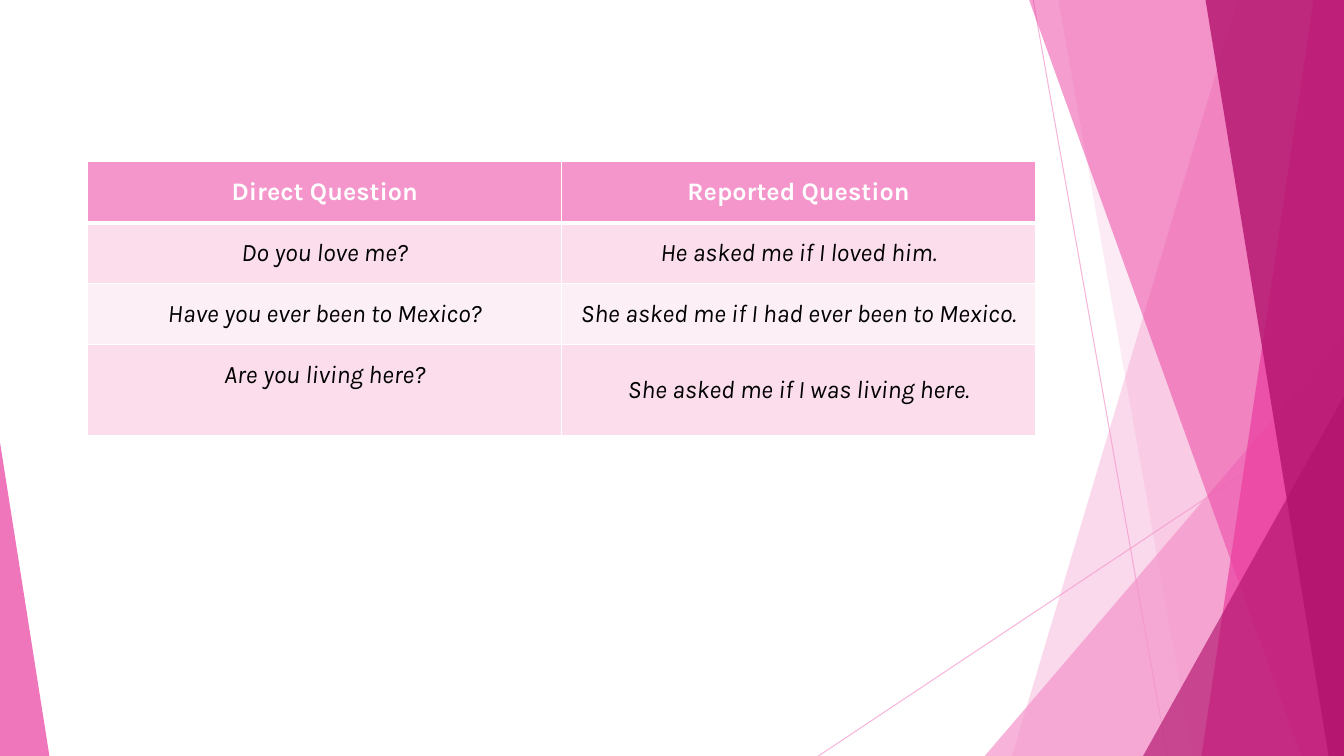
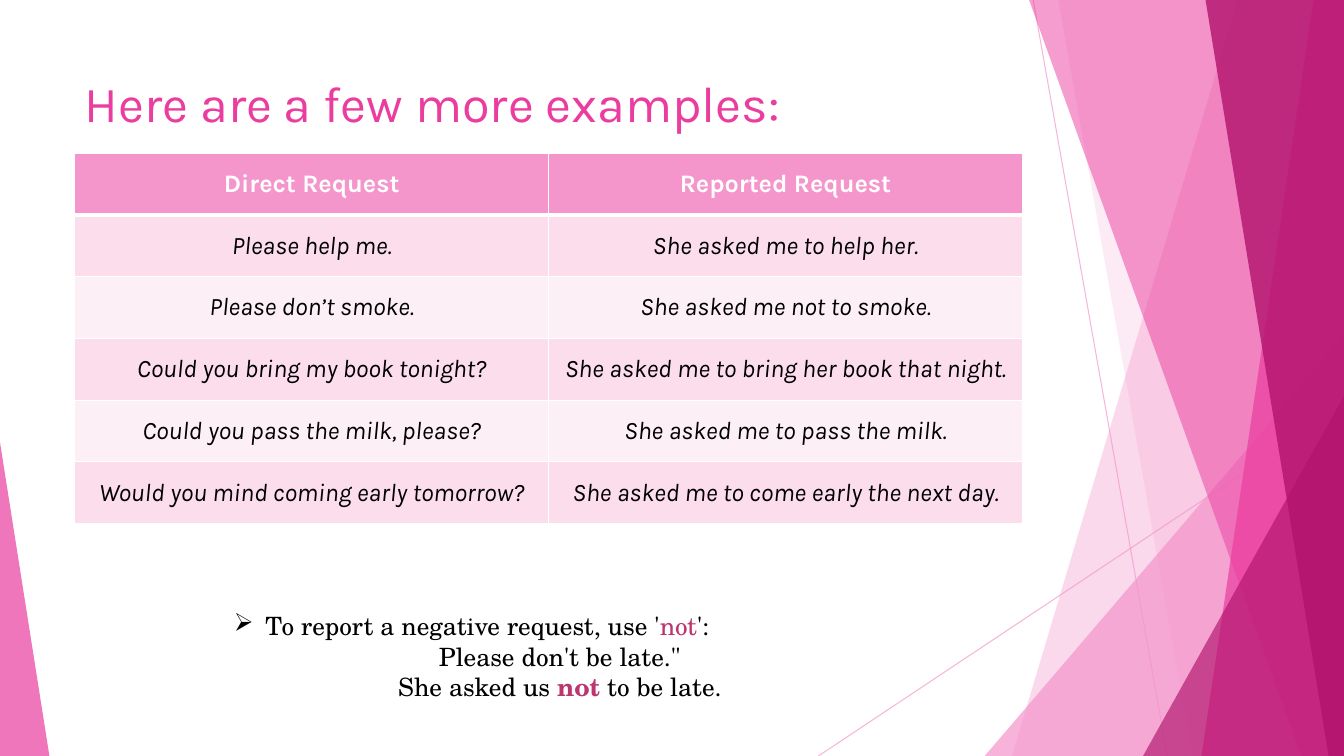
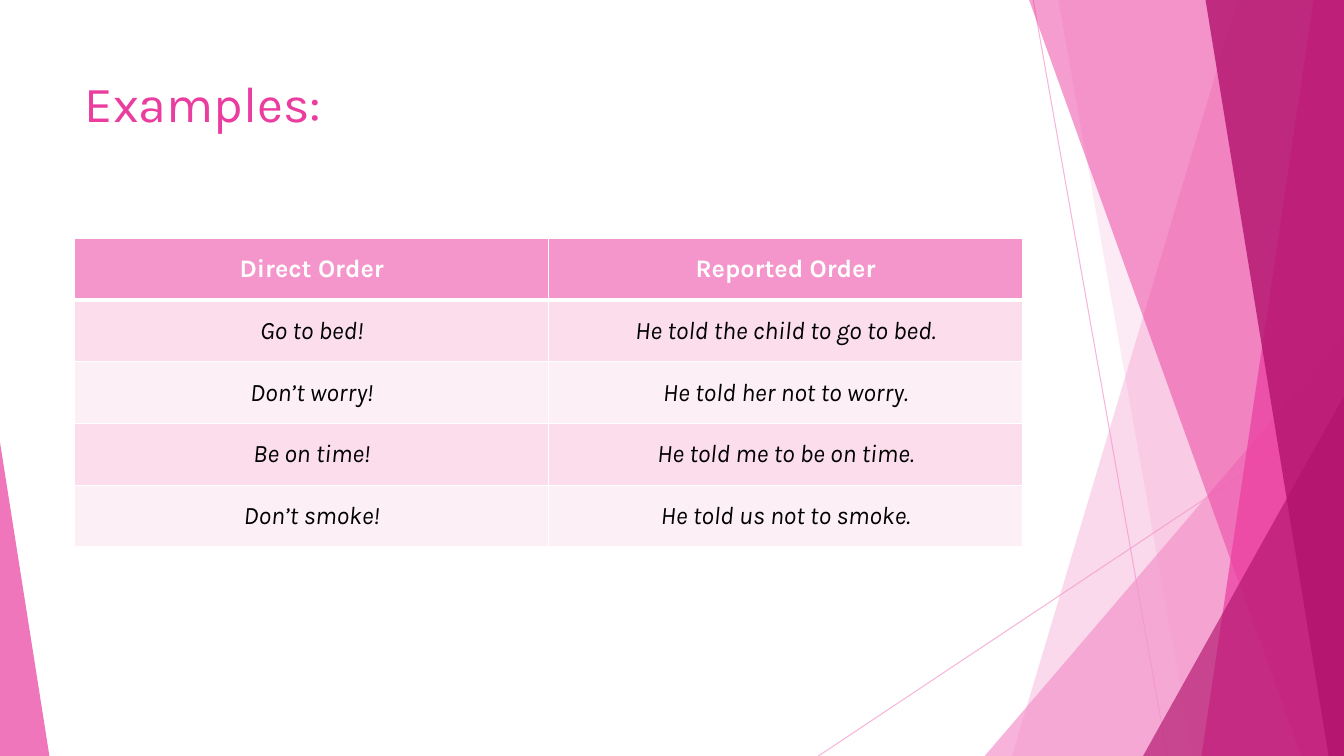
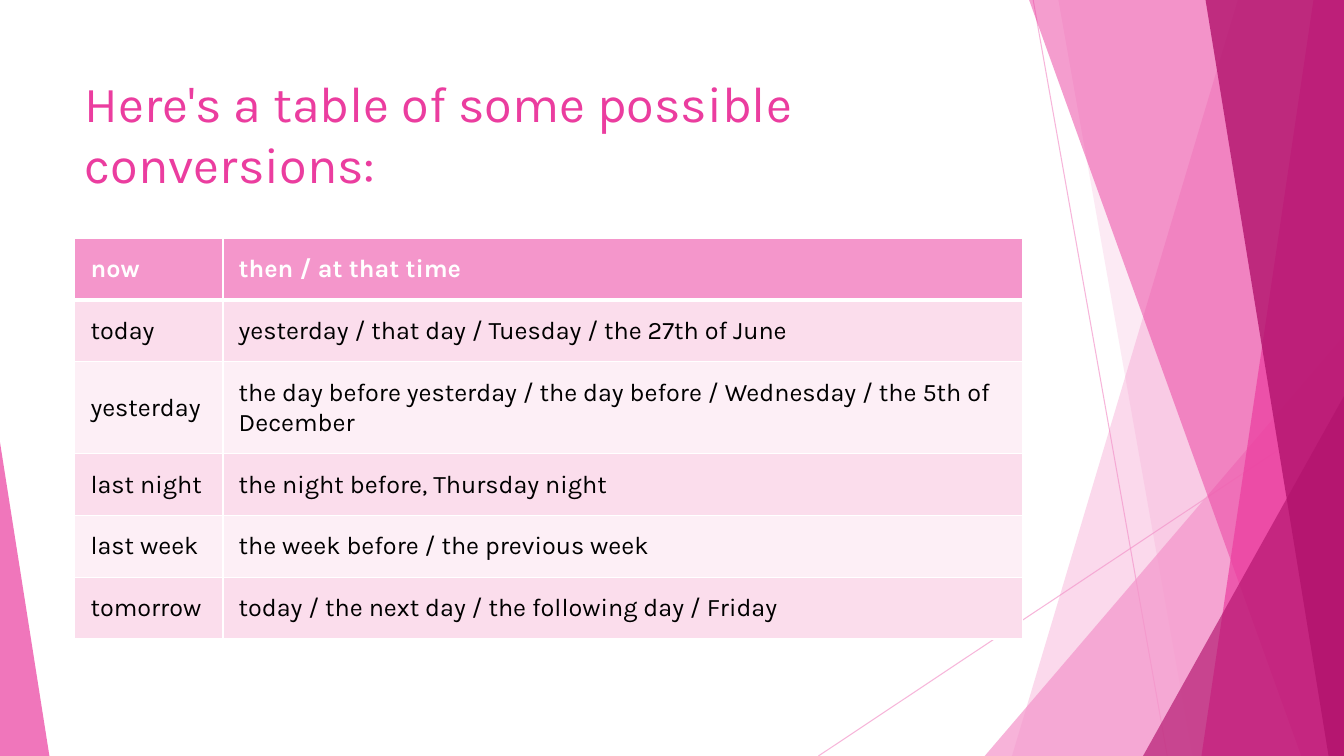
from lxml.etree import SubElement
from pptx import Presentation
from pptx.dml.color import RGBColor
from pptx.enum.shapes import MSO_CONNECTOR, MSO_SHAPE
from pptx.enum.text import MSO_ANCHOR, PP_ALIGN
from pptx.oxml import parse_xml
from pptx.oxml.ns import nsdecls, qn
from pptx.util import Pt

COLORS = {
    "pale": "F496CB", "pink": "EB3D9F", "deep": "B2136D",
    "band_dark": "FBDDEC", "band_light": "FDEFF6",
    "accent": "BC356F", "black": "000000", "white": "FFFFFF",
}
WIDTH, HEIGHT = 960, 540
ROW_HEIGHT, TALL_ROW_HEIGHT, CELL_MARGIN = 43.6, 64.6, 11.25

# Facets from back to front: a slab runs from its left edge to the slide's right
# side (top x, bottom x); a wedge is a triangle (left, top, width, apex position).
FACETS = [
    ("slab", (884.2, 722.9), "pale", 36),
    ("slab", (756, 851.8), "pale", 20),
    ("wedge", (703.4, 240, 256.6, 1), "pale", 72),
    ("slab", (735.1, 929.5), "pink", 50),
    ("slab", (938.2, 858.2), "pink", 70),
    ("slab", (861.1, 949), "deep", 80),
    ("wedge", (816.5, 283, 143.5, 1), "deep", 66),
    ("wedge", (0, 316, 35.3, 0), "pink", 70),
]
RAYS = [(738, 0, 833.8, HEIGHT), (WIDTH, 290.2, 584.6, HEIGHT)]

HALVES = (338.4, 338.4)
LESSONS = [
    {"title": None, "left": 62.8, "top": 115.5, "columns": HALVES, "centred": True,
     "rows": [
         ("Direct Question", "Reported Question"),
         ("Do you love me?", "He asked me if I loved him."),
         ("Have you ever been to Mexico?", "She asked me if I had ever been to Mexico."),
         ("Are you living here?", "She asked me if I was living here."),
     ]},
    {"title": "Here are a few more examples:", "left": 53.5, "top": 109.5,
     "columns": HALVES, "centred": True,
     "rows": [
         ("Direct Request", "Reported Request"),
         ("Please help me.", "She asked me to help her."),
         ("Please don’t smoke.", "She asked me not to smoke."),
         ("Could you bring my book tonight?", "She asked me to bring her book that night."),
         ("Could you pass the milk, please?", "She asked me to pass the milk."),
         ("Would you mind coming early tomorrow?", "She asked me to come early the next day."),
     ]},
    {"title": "Examples:", "left": 53.5, "top": 170.3, "columns": HALVES, "centred": True,
     "rows": [
         ("Direct Order", "Reported Order"),
         ("Go to bed!", "He told the child to go to bed."),
         ("Don’t worry!", "He told her not to worry."),
         ("Be on time!", "He told me to be on time."),
         ("Don’t smoke!", "He told us not to smoke."),
     ]},
    {"title": "Here's a table of some possible conversions:", "left": 53.5, "top": 170.3,
     "columns": (105.8, 571), "centred": False,
     "rows": [
         ("now", "then / at that time"),
         ("today", "yesterday / that day / Tuesday / the 27th of June"),
         ("yesterday", "the day before yesterday / the day before / Wednesday / the 5th of December"),
         ("last night", "the night before, Thursday night"),
         ("last week", "the week before / the previous week"),
         ("tomorrow", "today / the next day / the following day / Friday"),
     ]},
]
NOTE = [
    [("To report a negative request, use '", "black", False), ("not", "accent", False),
     ("':", "black", False)],
    [("Please don't be late.\"", "black", False)],
    [("She asked us ", "black", False), ("not", "accent", True),
     (" to be late.", "black", False)],
]


def set_opacity(shape, percent):
    for color in shape.element.iter(qn("a:srgbClr")):
        SubElement(color, qn("a:alpha"), val=str(percent * 1000))


def style_span(span, size, color, name="Karla", bold=False, italic=False):
    font = span.font
    font.size, font.name, font.bold, font.italic = Pt(size), name, bold, italic
    font.color.rgb = RGBColor.from_string(COLORS[color])


deck = Presentation()
deck.slide_width, deck.slide_height = Pt(WIDTH), Pt(HEIGHT)
layout = deck.slide_layouts[6]
for placeholder in list(layout.placeholders):
    layout.shapes.element.remove(placeholder.element)
pages = [deck.slides.add_slide(layout) for lesson in LESSONS]

# Shared backdrop: drawn on the first page, then moved into the layout
canvas = pages[0].shapes
for ray in RAYS:
    line = canvas.add_connector(MSO_CONNECTOR.STRAIGHT, *[Pt(value) for value in ray])
    line.line.width = Pt(0.75)
    line.line.color.rgb = RGBColor.from_string(COLORS["pale"])
    SubElement(line.element.spPr, qn("a:effectLst"))
    set_opacity(line, 70)

for kind, measures, color, opacity in FACETS:
    if kind == "slab":
        top_x, bottom_x = measures
        builder = canvas.build_freeform(Pt(top_x), 0)
        corners = [(WIDTH, 0), (WIDTH, HEIGHT), (bottom_x, HEIGHT)]
        builder.add_line_segments([(Pt(x), Pt(y)) for x, y in corners])
        facet = builder.convert_to_shape()
    else:
        left, top, width, apex = measures
        facet = canvas.add_shape(MSO_SHAPE.ISOSCELES_TRIANGLE,
                                 Pt(left), Pt(top), Pt(width), Pt(HEIGHT - top))
        facet.adjustments[0] = apex
    facet.shadow.inherit = False
    facet.line.fill.background()
    facet.fill.solid()
    facet.fill.fore_color.rgb = RGBColor.from_string(COLORS[color])
    set_opacity(facet, opacity)

for shape in list(canvas):
    layout.shapes.element.append(shape.element)

# Titles and tables
for page, lesson in zip(pages, LESSONS):
    if lesson["title"]:
        box = page.shapes.add_textbox(Pt(53.5), Pt(48), Pt(676.8), Pt(104))
        box.text_frame.word_wrap = True
        box.text_frame.text = lesson["title"]
        style_span(box.text_frame.paragraphs[0].runs[0], 36, "pink")

    rows, columns = lesson["rows"], lesson["columns"]
    table = page.shapes.add_table(
        len(rows), len(columns), Pt(lesson["left"]), Pt(lesson["top"]),
        Pt(sum(columns)), Pt(ROW_HEIGHT * len(rows))).table
    for column, width in zip(table.columns, columns):
        column.width = Pt(width)

    for row_index, texts in enumerate(rows):
        header = row_index == 0
        table.rows[row_index].height = Pt(ROW_HEIGHT)
        fill = "pale" if header else ("band_light", "band_dark")[row_index % 2]
        edges = {"lnL": 1, "lnR": 1, "lnT": 3 if row_index == 1 else 1,
                 "lnB": 3 if header else 1}
        for column_index, text in enumerate(texts):
            cell = table.cell(row_index, column_index)
            cell.margin_left = cell.margin_right = Pt(CELL_MARGIN)
            cell.margin_top = cell.margin_bottom = Pt(CELL_MARGIN)
            cell.vertical_anchor = MSO_ANCHOR.MIDDLE
            cell.fill.solid()
            cell.fill.fore_color.rgb = RGBColor.from_string(COLORS[fill])
            cell.text_frame.text = text
            para = cell.text_frame.paragraphs[0]
            para.alignment = PP_ALIGN.CENTER if lesson["centred"] else PP_ALIGN.LEFT
            style_span(para.runs[0], 18, "white" if header else "black",
                       bold=header, italic=lesson["centred"] and not header)
            properties = cell._tc.get_or_add_tcPr()
            for position, (edge, weight) in enumerate(edges.items()):
                properties.insert(position, parse_xml(
                    f'<a:{edge} {nsdecls("a")} w="{Pt(weight)}"><a:solidFill>'
                    f'<a:srgbClr val="{COLORS["white"]}"/></a:solidFill></a:{edge}>'))

    if page is pages[0]:
        table.rows[3].height = Pt(TALL_ROW_HEIGHT)
        table.cell(3, 0).vertical_anchor = MSO_ANCHOR.TOP

# Note on negative requests
note = pages[1].shapes.add_textbox(Pt(160), Pt(432.7), Pt(480), Pt(72.7))
note.text_frame.word_wrap = True
for index, parts in enumerate(NOTE):
    para = note.text_frame.paragraphs[0] if index == 0 else note.text_frame.add_paragraph()
    for text, color, bold in parts:
        span = para.add_run()
        span.text = text
        style_span(span, 18, color, name="TeX Gyre Schola", bold=bold)
    if index == 0:
        indents = para._p.get_or_add_pPr()
        indents.set("marL", str(Pt(22.5)))
        indents.set("indent", str(-Pt(22.5)))
        SubElement(indents, qn("a:buChar"), char="➢")
    else:
        para.alignment = PP_ALIGN.CENTER

deck.save("out.pptx")
